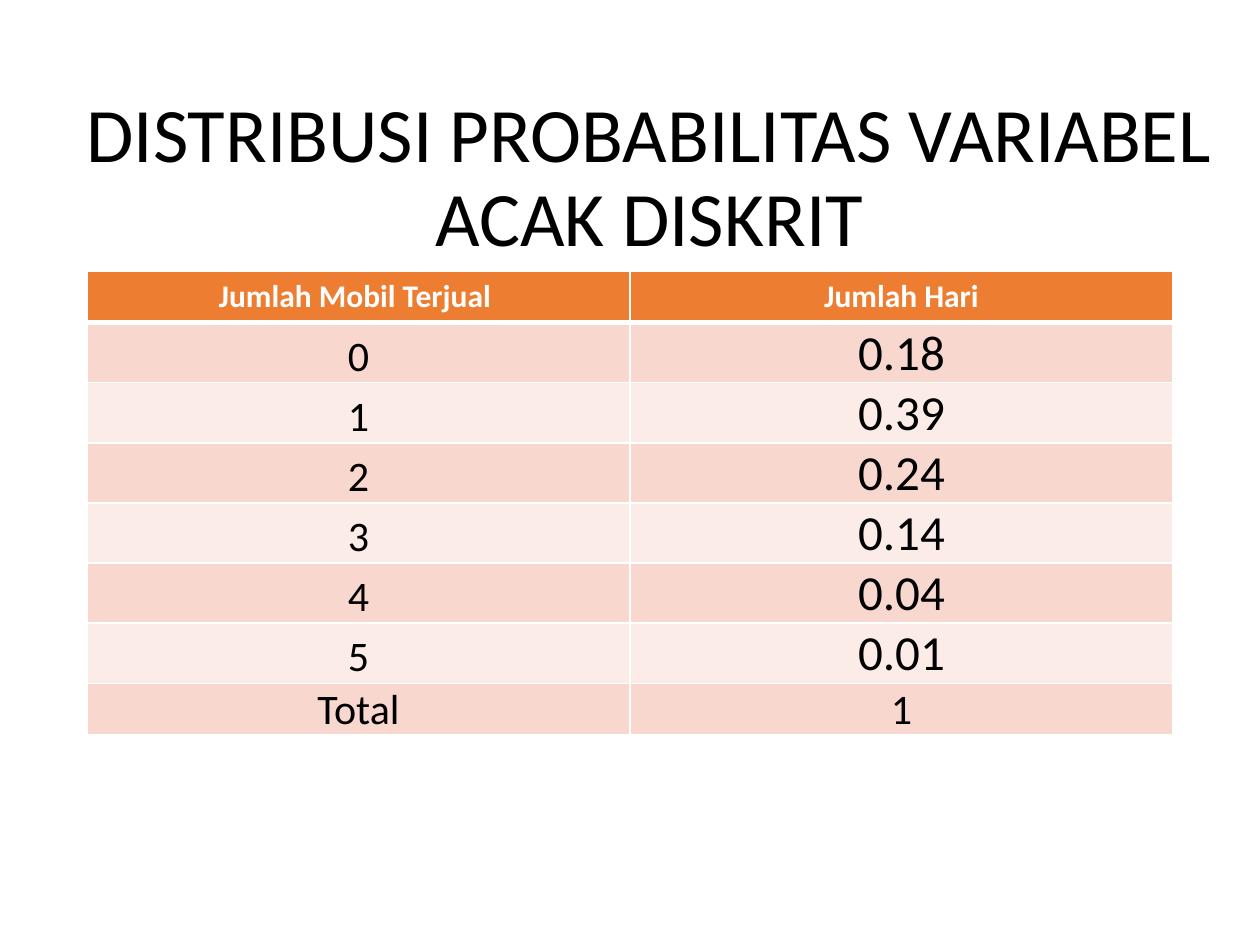
from lxml.etree import SubElement
from pptx import Presentation
from pptx.dml.color import RGBColor
from pptx.enum.text import MSO_ANCHOR as Anchor, PP_ALIGN as Align
from pptx.oxml.ns import qn
from pptx.util import Inches, Pt

TITLE = "DISTRIBUSI PROBABILITAS VARIABEL ACAK DISKRIT"
ROWS = [
    ("Jumlah Mobil Terjual ", "Jumlah Hari"),
    ("0", "0.18"),
    ("1", "0.39"),
    ("2", "0.24"),
    ("3", "0.14"),
    ("4", "0.04"),
    ("5", "0.01"),
    ("Total", "1"),
]
FONT, BLACK, WHITE = "Calibri", "000000", "FFFFFF"
HEAD, BANDS = "ED7D31", ("FCECE8", "F8D7CE")
COL, ROW = 4.31, 0.41
LEFT, TOP = 0.69, 2.15


def write(frame, text, size, color, bold=False):
    para = frame.paragraphs[0]
    para.alignment = Align.CENTER
    run = para.add_run()
    run.text = text
    font = run.font
    font.name, font.size, font.bold = FONT, Pt(size), bold
    font.color.rgb = RGBColor.from_string(color)
    return para


def pad(item, left, top, right, bottom):
    item.margin_left, item.margin_top = Inches(left), Inches(top)
    item.margin_right, item.margin_bottom = Inches(right), Inches(bottom)


def border(cell, top, bottom):
    """Add white edges, 1 pt at the sides; call before the fill is set."""
    props = cell._tc.get_or_add_tcPr()
    for side, width in (("L", 1), ("R", 1), ("T", top), ("B", bottom)):
        line = SubElement(props, qn(f"a:ln{side}"), w=str(Pt(width)))
        fill = SubElement(line, qn("a:solidFill"))
        SubElement(fill, qn("a:srgbClr"), val=WHITE)


def add_title(slide):
    box = slide.shapes.add_textbox(
        Inches(0.13), Inches(0.7), Inches(10.05), Inches(1.45))
    frame = box.text_frame
    frame.word_wrap = True
    frame.vertical_anchor = Anchor.MIDDLE
    write(frame, TITLE, 44, BLACK).line_spacing = 0.9


def add_grid(slide):
    count, wide = len(ROWS), len(ROWS[0])
    table = slide.shapes.add_table(
        count, wide, Inches(LEFT), Inches(TOP),
        Inches(COL * wide), Inches(ROW * count)).table
    for col in table.columns:
        col.width = Inches(COL)
    for r, texts in enumerate(ROWS):
        table.rows[r].height = Inches(ROW)
        for c, text in enumerate(texts):
            cell = table.cell(r, c)
            border(cell, 3 if r == 1 else 1, 3 if r == 0 else 1)
            cell.fill.solid()
            shade = BANDS[r % 2] if r else HEAD
            cell.fill.fore_color.rgb = RGBColor.from_string(shade)
            if r == 0:
                cell.vertical_anchor = Anchor.MIDDLE
                pad(cell, 0.1, 0.05, 0.1, 0.05)
                write(cell.text_frame, text, 18, WHITE, True)
            else:
                cell.vertical_anchor = Anchor.BOTTOM
                pad(cell, 0.01, 0.01, 0.01, 0)
                size = 28 if c == 1 and r < count - 1 else 24
                write(cell.text_frame, text, size, BLACK)


def main():
    deck = Presentation()
    deck.slide_width, deck.slide_height = Inches(10), Inches(7.5)
    slide = deck.slides.add_slide(deck.slide_layouts[6])
    add_title(slide)
    add_grid(slide)
    deck.save("out.pptx")


if __name__ == "__main__":
    main()
